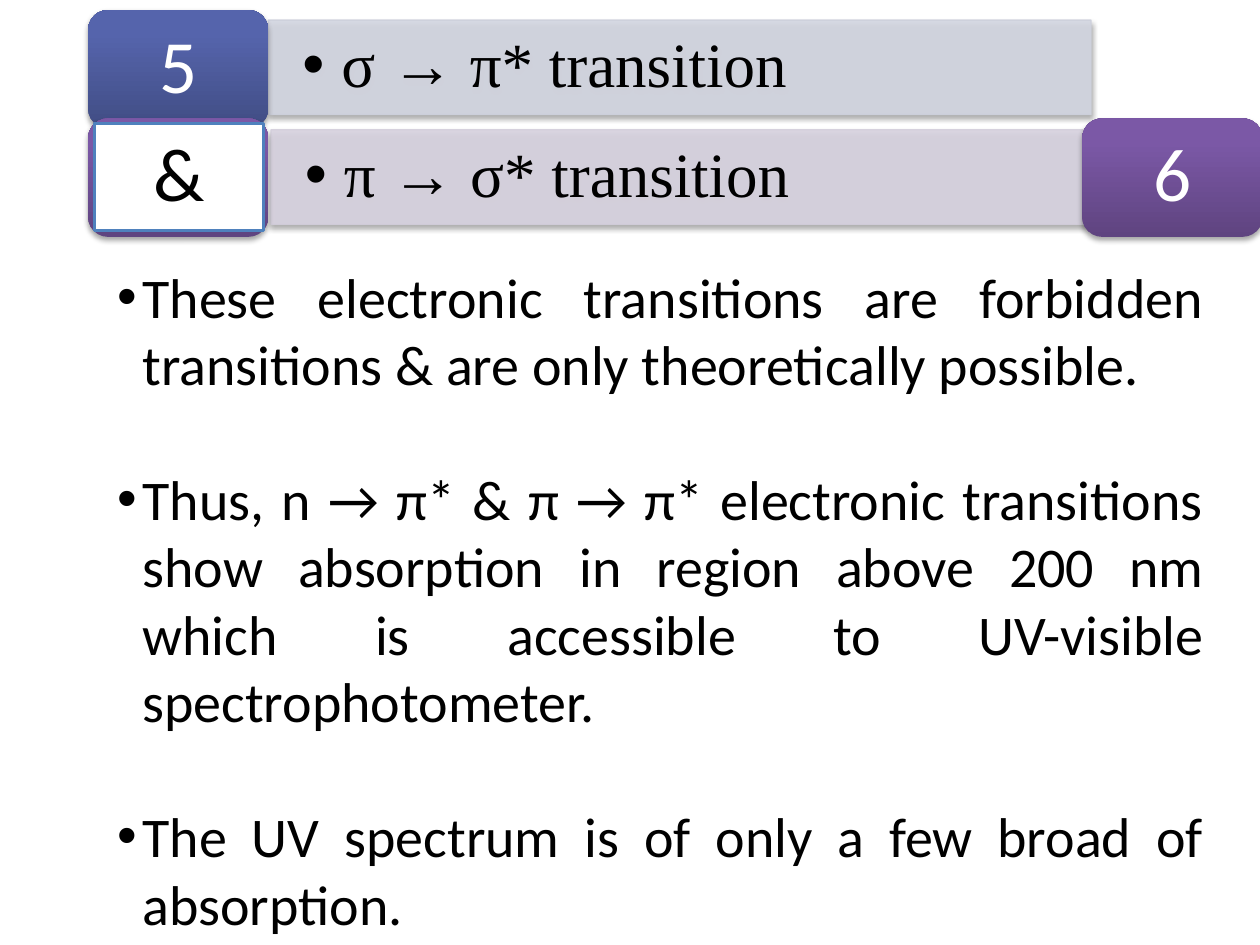
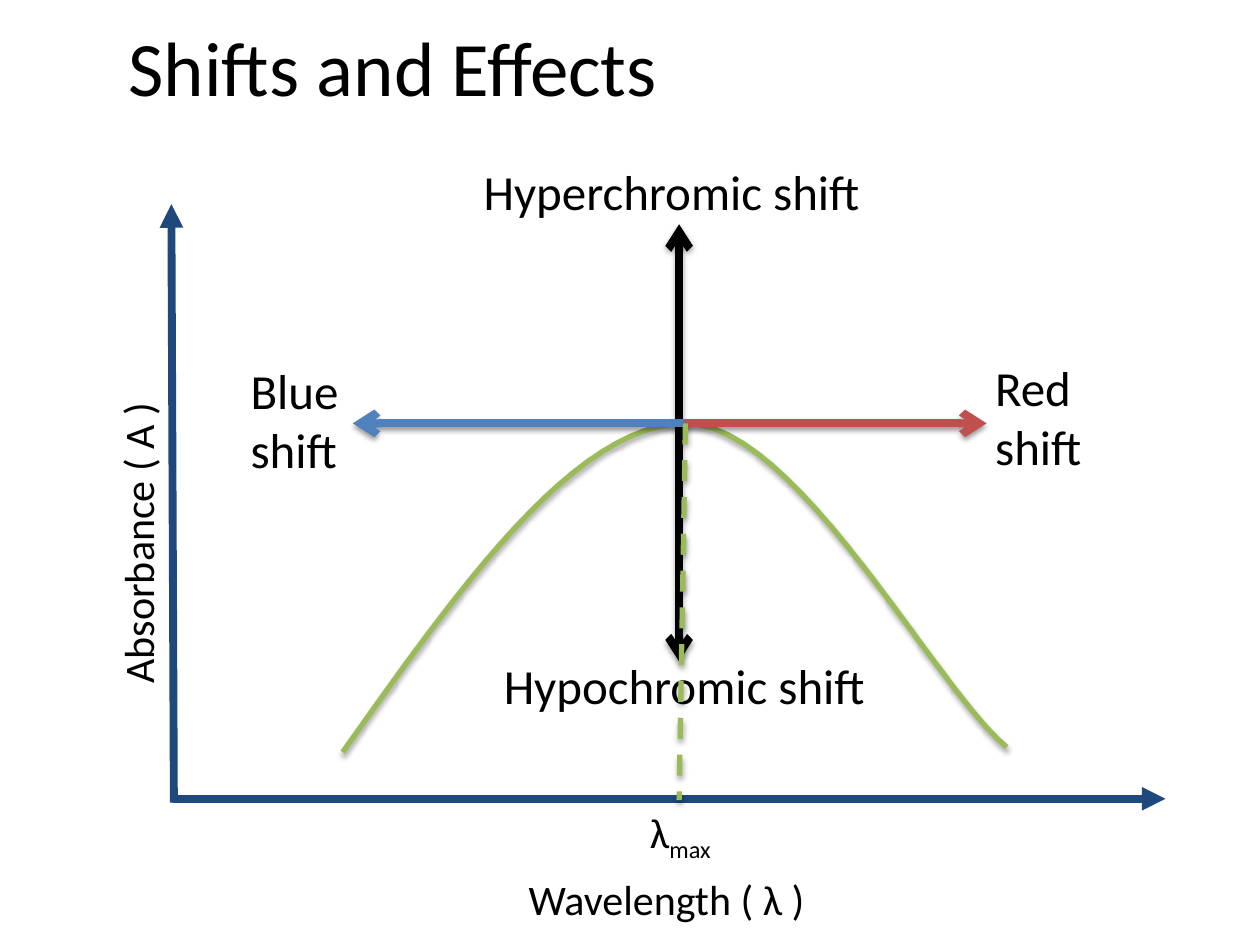
from dataclasses import dataclass

from pptx import Presentation
from pptx.dml.color import RGBColor
from pptx.enum.dml import MSO_LINE
from pptx.enum.shapes import MSO_CONNECTOR, MSO_SHAPE
from pptx.enum.text import MSO_ANCHOR, MSO_AUTO_SIZE, PP_ALIGN
from pptx.oxml import parse_xml
from pptx.oxml.ns import nsdecls, qn
from pptx.util import Inches, Pt


@dataclass(frozen=True)
class Theme:
    body_font: str = "Calibri"
    band_font: str = "Times New Roman"
    black: str = "000000"
    white: str = "FFFFFF"
    navy: str = "1F497D"
    blue: str = "4F81BD"
    red: str = "C0504D"
    green: str = "9BBB59"
    indigo_tab: tuple = ("414D84", "5564AC")
    violet_tab: tuple = ("5F4480", "7B58A6")
    indigo_band: tuple = ("D3D6E1", "CED1DC")
    violet_band: tuple = ("D8D3E0", "D3CEDB")
    title_size: int = 44
    tab_size: int = 43
    band_size: int = 36
    list_size: int = 32
    label_size: int = 28
    axis_size: int = 24
    thick: float = 4.5
    curve: float = 3


class SlideBuilder:
    def __init__(self, deck, theme):
        self.deck = deck
        self.theme = theme
        self.page = None

    def start(self, layout_index):
        layout = self.deck.slide_layouts[layout_index]
        self.page = self.deck.slides.add_slide(layout)

    def place(self, shape, left, top, width, height):
        shape.left, shape.top = Inches(left), Inches(top)
        shape.width, shape.height = Inches(width), Inches(height)

    def span(self, para, text, size, color=None, font=None):
        span = para.add_run()
        span.text = text
        span.font.size = Pt(size)
        span.font.name = font or self.theme.body_font
        span.font.color.rgb = RGBColor.from_string(color or self.theme.black)
        return span

    def indent(self, para, amount, bullet="•"):
        properties = para._p.get_or_add_pPr()
        properties.set("marL", str(Inches(amount)))
        properties.set("indent", str(-Inches(amount)))
        properties.append(parse_xml(f'<a:buFont {nsdecls("a")} typeface="Arial"/>'))
        properties.append(parse_xml(f'<a:buChar {nsdecls("a")} char="{bullet}"/>'))

    def shadow(self, shape, opacity=35):
        properties = shape.element.find(qn("p:spPr"))
        for effects in properties.findall(qn("a:effectLst")):
            properties.remove(effects)
        properties.append(parse_xml(
            f'<a:effectLst {nsdecls("a")}><a:outerShdw blurRad="{Pt(3.1)}" '
            f'dist="{Pt(1.8)}" dir="5400000" rotWithShape="0">'
            f'<a:srgbClr val="{self.theme.black}"><a:alpha val="{opacity * 1000}"/>'
            '</a:srgbClr></a:outerShdw></a:effectLst>'))

    def stroke(self, shape, color, width):
        shape.line.color.rgb = RGBColor.from_string(color)
        shape.line.width = Pt(width)

    def inset(self, frame, across, down):
        frame.margin_left = frame.margin_right = Inches(across)
        frame.margin_top = frame.margin_bottom = Inches(down)
        frame.vertical_anchor = MSO_ANCHOR.MIDDLE
        frame.word_wrap = True

    def shape(self, kind, left, top, width, height):
        shape = self.page.shapes.add_shape(
            kind, Inches(left), Inches(top), Inches(width), Inches(height))
        shape.shadow.inherit = False
        return shape

    def tab_text(self, shape, text, color):
        self.inset(shape.text_frame, 0.18, 0.09)
        para = shape.text_frame.paragraphs[0]
        para.alignment = PP_ALIGN.CENTER
        para.line_spacing = 0.9
        self.span(para, text, self.theme.tab_size, color)

    def tab(self, left, top, colors, text=None):
        tab = self.shape(MSO_SHAPE.ROUNDED_RECTANGLE, left, top, 1.43, 0.94)
        tab.fill.gradient()
        tab.fill.gradient_angle = 90
        for stop, position, color in zip(tab.fill.gradient_stops, (0, 0.8), colors):
            stop.position = position
            stop.color.rgb = RGBColor.from_string(color)
        tab.line.fill.background()
        self.shadow(tab)
        if text:
            self.tab_text(tab, text, self.theme.white)

    def tab_cover(self, left, top, text):
        cover = self.shape(MSO_SHAPE.RECTANGLE, left, top, 1.34, 0.85)
        cover.fill.solid()
        cover.fill.fore_color.rgb = RGBColor.from_string(self.theme.white)
        self.stroke(cover, self.theme.blue, 2)
        self.tab_text(cover, text, self.theme.black)

    def band(self, left, top, width, colors, text):
        band = self.shape(MSO_SHAPE.RECTANGLE, left, top, width, 0.75)
        band.fill.solid()
        band.fill.fore_color.rgb = RGBColor.from_string(colors[0])
        self.stroke(band, colors[1], 0.75)
        for color in band.element.find(qn("p:spPr")).iter(qn("a:srgbClr")):
            color.append(parse_xml(f'<a:alpha {nsdecls("a")} val="90000"/>'))
        self.shadow(band)
        self.inset(band.text_frame, 0.27, 0.14)
        para = band.text_frame.paragraphs[0]
        para.alignment = PP_ALIGN.LEFT
        para.line_spacing = 0.9
        self.indent(para, 0.31)
        self.span(para, text, self.theme.band_size, font=self.theme.band_font)

    def title(self, text, left, top, width, height):
        title = self.page.shapes.title
        self.place(title, left, top, width, height)
        title.text_frame.vertical_anchor = MSO_ANCHOR.MIDDLE
        para = title.text_frame.paragraphs[0]
        para.alignment = PP_ALIGN.LEFT
        self.span(para, text, self.theme.title_size)

    def drop_title(self):
        title = self.page.shapes.title.element
        title.getparent().remove(title)

    def bullets(self, items, left, top, width, height):
        body = self.page.placeholders[1]
        self.place(body, left, top, width, height)
        frame = body.text_frame
        frame.auto_size = MSO_AUTO_SIZE.NONE
        for index, item in enumerate(items):
            para = frame.add_paragraph() if index else frame.paragraphs[0]
            para.alignment = PP_ALIGN.JUSTIFY
            para.space_before = Pt(39 if index else 0)
            self.indent(para, 0.2)
            self.span(para, item, self.theme.list_size)

    def text_box(self, left, top, width, height):
        box = self.page.shapes.add_textbox(
            Inches(left), Inches(top), Inches(width), Inches(height))
        box.text_frame.word_wrap = True
        return box

    def axis_label(self, text, left, top, width, height, rotation=0, subscript=None):
        box = self.text_box(left, top, width, height)
        box.rotation = rotation
        para = box.text_frame.paragraphs[0]
        para.alignment = PP_ALIGN.CENTER
        self.span(para, text, self.theme.axis_size)
        if subscript:
            span = self.span(para, subscript, self.theme.axis_size)
            span.font._element.set("baseline", "-25000")

    def shift_label(self, lines, left, top, width, height):
        frame = self.text_box(left, top, width, height).text_frame
        frame.word_wrap = False
        frame.auto_size = MSO_AUTO_SIZE.SHAPE_TO_FIT_TEXT
        for index, line in enumerate(lines):
            para = frame.add_paragraph() if index else frame.paragraphs[0]
            self.span(para, line, self.theme.label_size)

    def line(self, start, end, color, width, head=None, tail=None, dash=None, opacity=0):
        line = self.page.shapes.add_connector(
            MSO_CONNECTOR.STRAIGHT, *map(Inches, start + end))
        self.stroke(line, color, width)
        if dash:
            line.line.dash_style = dash
        properties = line.element.find(qn("p:spPr"))
        outline = properties.find(qn("a:ln"))
        for tag, arrow in (("headEnd", head), ("tailEnd", tail)):
            if arrow:
                outline.append(parse_xml(f'<a:{tag} {nsdecls("a")} type="{arrow}"/>'))
        if opacity:
            self.shadow(line, opacity)
        else:
            properties.append(parse_xml(f'<a:effectLst {nsdecls("a")}/>'))

    def curve(self, start, segments, color, steps=24):
        points = []
        origin = start
        for first, second, end in segments:
            for step in range(1, steps + 1):
                t = step / steps
                weights = ((1 - t) ** 3, 3 * t * (1 - t) ** 2, 3 * t ** 2 * (1 - t), t ** 3)
                controls = zip(*(origin, first, second, end))
                points.append(tuple(
                    Inches(sum(w * value for w, value in zip(weights, values)))
                    for values in controls))
            origin = end
        builder = self.page.shapes.build_freeform(*map(Inches, start))
        builder.add_line_segments(points, close=False)
        curve = builder.convert_to_shape()
        curve.fill.background()
        self.stroke(curve, color, self.theme.curve)
        self.shadow(curve)


def build_transitions(builder):
    theme = builder.theme
    builder.start(1)
    builder.drop_title()
    builder.bullets([
        "These electronic transitions are forbidden transitions & are only "
        "theoretically possible.",
        "Thus, n → π* & π → π* electronic transitions show absorption in region "
        "above 200 nm which is accessible to UV-visible spectrophotometer.",
        "The UV spectrum is of only a few broad of absorption.",
    ], 0.83, 2.03, 8.83, 4.84)
    builder.band(2.13, 0.16, 6.53, theme.indigo_band, "σ → π* transition")
    builder.tab(0.7, 0.08, theme.indigo_tab, "5")
    builder.band(2.15, 1.03, 6.52, theme.violet_band, "π → σ* transition")
    builder.tab(8.59, 0.94, theme.violet_tab, "6")
    builder.tab(0.7, 0.94, theme.violet_tab)
    builder.tab_cover(0.75, 0.98, "&")


def build_shifts(builder):
    theme = builder.theme
    peak = (5.44, 3.36)
    builder.start(5)
    builder.line((1.37, 6.34), (9.25, 6.34), theme.navy, theme.thick, tail="triangle")
    builder.line((1.38, 6.37), (1.36, 1.62), theme.navy, theme.thick, tail="triangle")
    builder.axis_label("Wavelength ( λ )", 1.58, 6.88, 7.42, 0.57)
    builder.axis_label("Absorbance ( A )", -0.99, 4.11, 4.06, 0.4, rotation=270)
    builder.title("Shifts and Effects", 0.92, -0.1, 8.83, 1.25)
    builder.curve((2.72, 5.97), [
        ((3.64, 4.67), (4.56, 3.37), peak),
        ((6.32, 3.36), (7.42, 5.46), (7.99, 5.93)),
    ], theme.green)
    builder.line((5.39, 1.78), (5.39, 5.25), theme.black, theme.thick,
                 head="arrow", tail="arrow", opacity=35)
    for end, color in ((2.8, theme.blue), (7.83, theme.red)):
        builder.line(peak, (end, 3.36), color, theme.thick, tail="arrow", opacity=38)
    builder.shift_label(["Hyperchromic shift"], 3.74, 1.23, 3.23, 0.57)
    builder.shift_label(["Hypochromic shift"], 3.9, 5.15, 3.23, 0.57)
    builder.shift_label(["Red", "shift"], 7.8, 2.79, 0.9, 1.04)
    builder.shift_label(["Blue", "shift"], 1.89, 2.81, 0.9, 1.04)
    builder.line(peak, (5.39, 6.35), theme.green, theme.curve,
                 dash=MSO_LINE.DASH, opacity=35)
    builder.axis_label("λ", 1.69, 6.35, 7.42, 0.57, subscript="max")


def main():
    deck = Presentation()
    deck.slide_width, deck.slide_height = Inches(10), Inches(7.5)
    builder = SlideBuilder(deck, Theme())
    build_transitions(builder)
    build_shifts(builder)
    deck.save("out.pptx")


if __name__ == "__main__":
    main()
